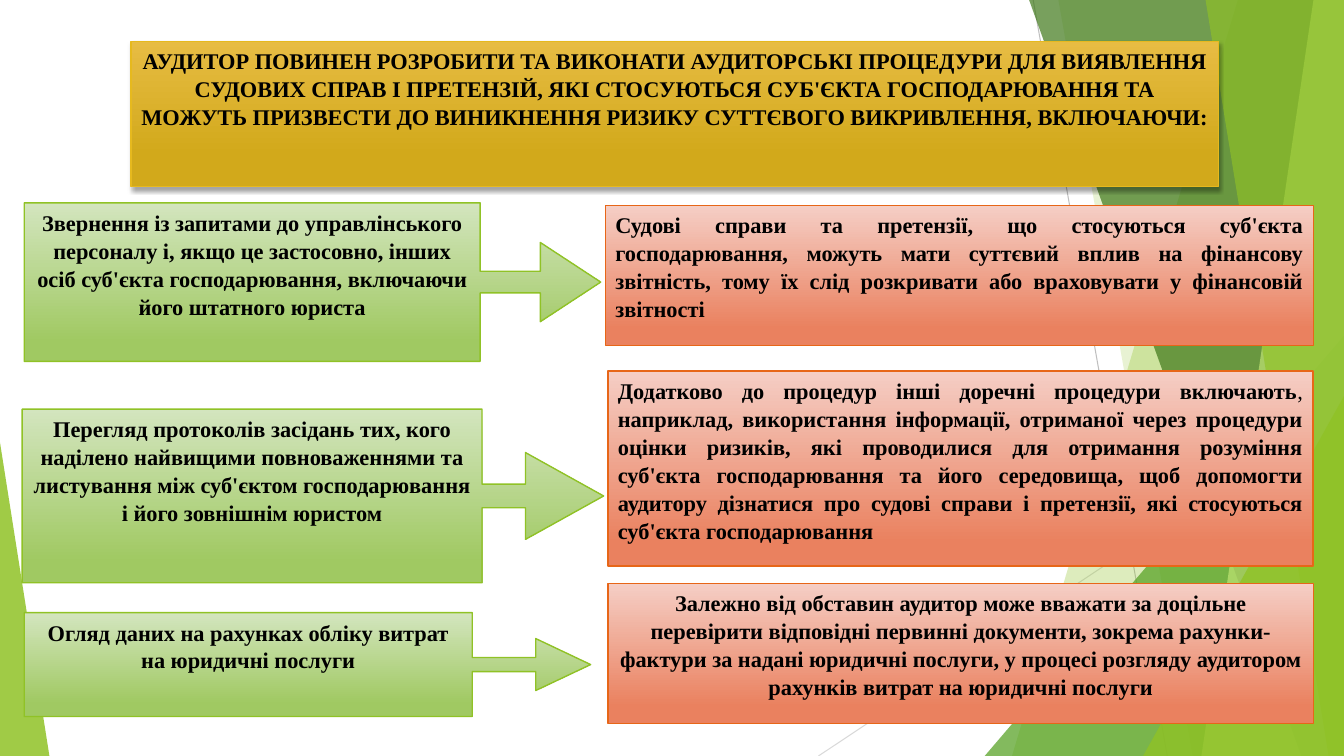
from lxml import etree
from pptx import Presentation
from pptx.dml.color import RGBColor
from pptx.enum import shapes, text
from pptx.oxml import ns, parse_xml
from pptx.util import Pt

WIDTH, HEIGHT = 960, 540
FONT = "Times New Roman"
COLORS = {
    "text": "000000", "ray": "BFBFBF", "pale_ray": "D9D9D9",
    "lime": "90C226", "green": "54A021", "dark_green": "3F7819", "light_lime": "C0E474",
    "gold_top": "E7BC43", "gold_bottom": "D2A91B", "gold_line": "E6B91E",
    "green_top": "D3E5BE", "green_bottom": "A0C962",
    "coral_top": "F5CEC5", "coral_bottom": "EA815F", "coral_line": "E76618",
}
CENTER, JUSTIFY = text.PP_ALIGN.CENTER, text.PP_ALIGN.JUSTIFY

HEADING = (
    "АУДИТОР ПОВИНЕН РОЗРОБИТИ ТА ВИКОНАТИ АУДИТОРСЬКІ ПРОЦЕДУРИ ДЛЯ ВИЯВЛЕННЯ "
    "СУДОВИХ СПРАВ І ПРЕТЕНЗІЙ, ЯКІ СТОСУЮТЬСЯ СУБ'ЄКТА ГОСПОДАРЮВАННЯ ТА МОЖУТЬ "
    "ПРИЗВЕСТИ ДО ВИНИКНЕННЯ РИЗИКУ СУТТЄВОГО ВИКРИВЛЕННЯ, ВКЛЮЧАЮЧИ:"
)
# Callout box, arrowhead length, callout text; result box, alignment, result runs
ROWS = [
    ((17.3, 144.9, 411.8, 113.2), 0.381,
     "Звернення із запитами до управлінського персоналу і, якщо це застосовно, інших осіб "
     "суб'єкта господарювання, включаючи його штатного юриста",
     (432.5, 146.8, 505.5, 100), JUSTIFY,
     ["Судові справи та претензії, що стосуються суб'єкта господарювання, можуть мати "
      "суттєвий вплив на фінансову звітність, тому їх слід розкривати або враховувати у "
      "фінансовій звітності"]),
    ((15.8, 292.3, 415.4, 124), 0.45,
     "Перегляд протоколів засідань тих, кого наділено найвищими повноваженнями та "
     "листування між суб'єктом господарювання і його зовнішнім юристом",
     (434.3, 265, 503.5, 139.2), JUSTIFY,
     ["Додатково до процедур інші доречні процедури включають", ", ",
      "наприклад, використання інформації, отриманої через процедури оцінки ризиків, які "
      "проводилися для отримання розуміння суб'єкта господарювання та його середовища, щоб "
      "допомогти аудитору дізнатися про судові справи і претензії, які стосуються суб'єкта "
      "господарювання"]),
    ((17.3, 437.6, 404.6, 74.2), 0.528,
     "Огляд даних на рахунках обліку витрат на юридичні послуги",
     (434.3, 416.8, 504, 100), CENTER,
     ["Залежно від обставин аудитор може вважати за доцільне перевірити відповідні первинні "
      "документи, зокрема рахунки-фактури за надані юридичні послуги, у процесі розгляду "
      "аудитором рахунків витрат на юридичні послуги"]),
]


def rgb(name):
    return RGBColor.from_string(COLORS[name])


def points(values):
    return [Pt(value) for value in values]


def add_ray(slide, start, end, color):
    ray = slide.shapes.add_connector(
        shapes.MSO_CONNECTOR.STRAIGHT, *points(start), *points(end))
    ray.line.color.rgb = rgb(color)
    ray.line.width = Pt(0.75)
    etree.SubElement(ray._element.spPr, ns.qn("a:effectLst"))


def fill_translucent(shape, color, opacity):
    shape.shadow.inherit = False
    shape.fill.solid()
    shape.fill.fore_color.rgb = rgb(color)
    shape.line.fill.background()
    color_element = shape._element.spPr.find(ns.qn("a:solidFill"))[0]
    etree.SubElement(color_element, ns.qn("a:alpha"), val=str(opacity * 1000))


def add_facet(slide, top_x, bottom_x, color, opacity):
    """Fill the area between a slanted edge and the right side of the slide."""
    builder = slide.shapes.build_freeform(Pt(top_x), 0)
    corners = [(WIDTH, 0), (WIDTH, HEIGHT), (bottom_x, HEIGHT)]
    builder.add_line_segments([points(corner) for corner in corners])
    fill_translucent(builder.convert_to_shape(), color, opacity)


def add_corner(slide, left, width, height, apex, color, opacity):
    """Add a right triangle that stands on the bottom edge of the slide."""
    triangle = slide.shapes.add_shape(
        shapes.MSO_SHAPE.ISOSCELES_TRIANGLE, *points((left, HEIGHT - height, width, height)))
    triangle.adjustments[0] = apex
    fill_translucent(triangle, color, opacity)


def add_backdrop(slide):
    add_ray(slide, (738, 0), (833.8, HEIGHT), "ray")
    add_ray(slide, (WIDTH, 290.2), (584.6, HEIGHT), "pale_ray")
    add_facet(slide, 884.2, 722.9, "lime", 30)
    add_facet(slide, 756, 851.8, "lime", 20)
    add_corner(slide, 703.4, 256.6, 300.2, 1, "green", 72)
    add_facet(slide, 735.1, 929.5, "dark_green", 70)
    add_facet(slide, 938.2, 858.2, "light_lime", 70)
    add_facet(slide, 861.1, 949, "lime", 65)
    add_corner(slide, 816.5, 143.5, 257, 1, "lime", 80)
    add_corner(slide, 0, 35.3, 223.9, 0, "lime", 85)


def paint(shape, top, bottom, bottom_position, line):
    shape.fill.gradient()
    shape.fill.gradient_angle = 270
    stops = shape.fill.gradient_stops
    for stop, color, position in zip(stops, (top, bottom), (0, bottom_position)):
        stop.color.rgb = rgb(color)
        stop.position = position
    shape.line.color.rgb = rgb(line)
    shape.line.width = Pt(1)


def write(shape, runs, alignment):
    """Write the runs so that every second one is not bold."""
    frame = shape.text_frame
    frame.word_wrap = True
    frame.auto_size = text.MSO_AUTO_SIZE.NONE
    frame.vertical_anchor = text.MSO_ANCHOR.TOP
    paragraph = frame.paragraphs[0]
    paragraph.alignment = alignment
    paragraph.line_spacing = 1.04
    for index, words in enumerate(runs):
        run = paragraph.add_run()
        run.text = words
        run.font.name = FONT
        run.font.size = Pt(16)
        run.font.bold = index % 2 == 0
        run.font.color.rgb = rgb("text")


def add_heading(slide, box):
    title = slide.shapes.title
    title.left, title.top, title.width, title.height = points(box)
    properties = title._element.spPr
    properties.append(parse_xml(
        f'<a:prstGeom {ns.nsdecls("a")} prst="roundRect"><a:avLst>'
        '<a:gd name="adj" fmla="val 16700"/></a:avLst></a:prstGeom>'))
    paint(title, "gold_top", "gold_bottom", 0.78, "gold_line")
    properties.append(parse_xml(
        f'<a:effectLst {ns.nsdecls("a")}>'
        '<a:outerShdw blurRad="38100" dist="25400" dir="5400000" rotWithShape="0">'
        f'<a:srgbClr val="{COLORS["text"]}"><a:alpha val="35000"/></a:srgbClr>'
        '</a:outerShdw></a:effectLst>'))
    write(title, [HEADING], CENTER)
    slide.shapes._spTree.append(title._element)  # in front of the backdrop


def add_callout(slide, box, head_length, words):
    callout = slide.shapes.add_shape(shapes.MSO_SHAPE.RIGHT_ARROW_CALLOUT, *points(box))
    for index, value in enumerate((0.136, 0.25, head_length, 0.791)):
        callout.adjustments[index] = value
    callout.shadow.inherit = False
    paint(callout, "green_top", "green_bottom", 0.88, "lime")
    write(callout, [words], CENTER)


def add_result(slide, box, alignment, runs):
    result = slide.shapes.add_shape(shapes.MSO_SHAPE.FLOWCHART_PROCESS, *points(box))
    result.shadow.inherit = False
    paint(result, "coral_top", "coral_bottom", 0.88, "coral_line")
    write(result, runs, alignment)


def main():
    presentation = Presentation()
    presentation.slide_width, presentation.slide_height = points((WIDTH, HEIGHT))
    slide = presentation.slides.add_slide(presentation.slide_layouts.get_by_name("Title Only"))
    add_backdrop(slide)
    add_heading(slide, (93.6, 29.5, 777, 103.7))
    for callout_box, head_length, words, result_box, alignment, runs in ROWS:
        add_callout(slide, callout_box, head_length, words)
        add_result(slide, result_box, alignment, runs)
    presentation.save("out.pptx")


if __name__ == "__main__":
    main()
